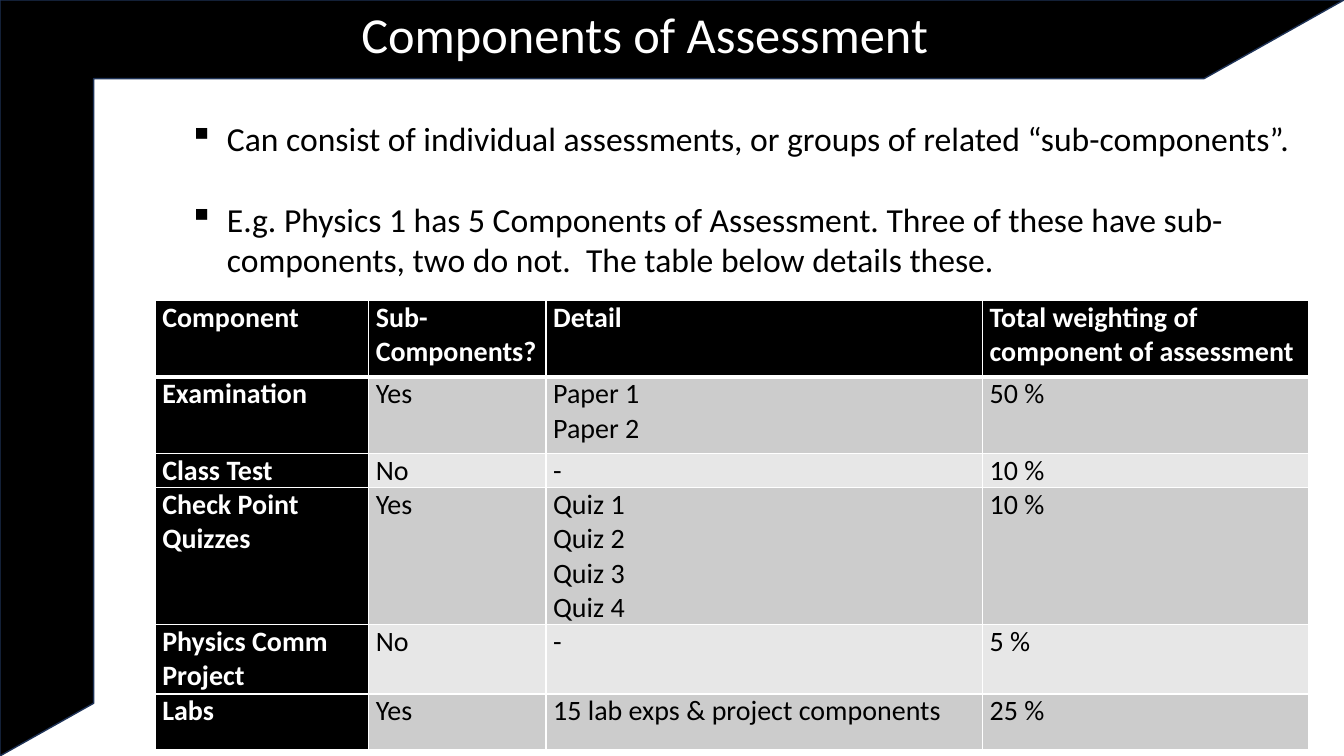
from lxml.etree import SubElement
from pptx import Presentation
from pptx.dml.color import RGBColor
from pptx.enum.shapes import MSO_SHAPE
from pptx.enum.text import MSO_ANCHOR, MSO_AUTO_SIZE, PP_ALIGN
from pptx.oxml import parse_xml
from pptx.oxml.ns import nsdecls, qn
from pptx.util import Cm, Pt

BLACK, WHITE, NAVY = "000000", "FFFFFF", "1E3256"
DARK_BAND, LIGHT_BAND = "CCCCCC", "E7E7E7"
WIDTH, HEIGHT = 33.87, 19.05

BULLETS = [
    "Can consist of individual assessments, or groups of related “sub-components”.",
    "E.g. Physics 1 has 5 Components of Assessment. Three of these have "
    "sub-components, two do not.  The table below details these.",
]
COMPONENTS = [
    ["Component", "Sub-Components?", "Detail",
     "Total weighting of component of assessment"],
    ["Examination", "Yes", "Paper 1\nPaper 2", "50 %"],
    ["Class Test", "No", "-", "10 %"],
    ["Check Point Quizzes", "Yes", "Quiz 1\nQuiz 2\nQuiz 3\nQuiz 4", "10 %"],
    ["Physics Comm Project", "No", "-", "5 %"],
    ["Labs", "Yes", "15 lab exps & project components", "25 %"],
]
COL_WIDTHS = [5.38, 4.47, 11, 8.21]
ROW_HEIGHTS = [1.93, 1.93, 0.86, 3.45, 1.75, 1.4]


def rgb(color):
    return RGBColor.from_string(color)


class AssessmentSlide:
    font = "Calibri"

    def __init__(self, prs):
        self.s = prs.slides.add_slide(prs.slide_layouts[6])

    def add_run(self, p, text, size, color=BLACK, bold=False):
        r = p.add_run()
        r.text = text
        r.font.name, r.font.size, r.font.bold = self.font, Pt(size), bold
        r.font.color.rgb = rgb(color)

    def frame(self):
        sp = self.s.shapes.add_shape(MSO_SHAPE.HALF_FRAME, 0, 0, Cm(WIDTH), Cm(HEIGHT))
        sp.adjustments[0], sp.adjustments[1] = 0.104, 0.124
        sp.shadow.inherit = False
        sp.fill.solid()
        sp.fill.fore_color.rgb = rgb(BLACK)
        sp.line.color.rgb = rgb(NAVY)
        sp.line.width = Pt(1)

    def text_box(self, x, y, w, h):
        tf = self.s.shapes.add_textbox(Cm(x), Cm(y), Cm(w), Cm(h)).text_frame
        tf.word_wrap = True
        return tf

    def title(self, text, x, y, w, h):
        tf = self.text_box(x, y, w, h)
        tf.vertical_anchor = MSO_ANCHOR.BOTTOM
        p = tf.paragraphs[0]
        p.alignment, p.line_spacing = PP_ALIGN.CENTER, 0.7
        self.add_run(p, text, 36, WHITE)

    def bullets(self, items, x, y, w, h):
        tf = self.text_box(x, y, w, h)
        tf.auto_size = MSO_AUTO_SIZE.SHAPE_TO_FIT_TEXT
        for i, item in enumerate(items):
            p = tf.add_paragraph() if i else tf.paragraphs[0]
            p.level = 1
            p.space_before = Pt(29 if i else 0)
            pPr = p._p.get_or_add_pPr()
            pPr.set("marL", str(Cm(2.22)))
            pPr.set("indent", str(Cm(-0.95)))
            SubElement(pPr, qn("a:buChar"), char="▪")
            self.add_run(p, item, 24)

    def borders(self, cell, top, bottom):
        """Draw white cell borders, 1 pt at the sides."""
        tcPr = cell._tc.get_or_add_tcPr()
        for i, (side, width) in enumerate(zip("LRTB", (1, 1, top, bottom))):
            tcPr.insert(i, parse_xml(
                f'<a:ln{side} {nsdecls("a")} w="{Pt(width)}"><a:solidFill>'
                f'<a:srgbClr val="{WHITE}"/></a:solidFill></a:ln{side}>'))

    def cell(self, cell, text, fill, heading):
        cell.margin_left = cell.margin_right = Cm(0.18)
        cell.margin_top = cell.margin_bottom = 0
        cell.fill.solid()
        cell.fill.fore_color.rgb = rgb(fill)
        tf = cell.text_frame
        for i, line in enumerate(text.split("\n")):
            p = tf.add_paragraph() if i else tf.paragraphs[0]
            self.add_run(p, line, 20, WHITE if heading else BLACK, heading)

    def table(self, rows, x, y, widths, heights):
        table = self.s.shapes.add_table(
            len(rows), len(widths), Cm(x), Cm(y),
            Cm(sum(widths)), Cm(sum(heights))).table
        for column, width in zip(table.columns, widths):
            column.width = Cm(width)
        for i, (row, height) in enumerate(zip(rows, heights)):
            table.rows[i].height = Cm(height)
            band = DARK_BAND if i % 2 else LIGHT_BAND
            for j, text in enumerate(row):
                heading = i == 0 or j == 0
                cell = table.cell(i, j)
                self.cell(cell, text, BLACK if heading else band, heading)
                self.borders(cell, 3 if i == 1 else 1, 3 if i == 0 else 1)


def main():
    prs = Presentation()
    prs.slide_width, prs.slide_height = Cm(WIDTH), Cm(HEIGHT)
    slide = AssessmentSlide(prs)
    slide.frame()
    slide.bullets(BULLETS, 3.25, 2.84, 30.35, 4.37)
    slide.table(COMPONENTS, 3.91, 7.57, COL_WIDTHS, ROW_HEIGHTS)
    slide.title("Components of Assessment", 6.05, 0.28, 20.4, 1.42)
    prs.save("out.pptx")


if __name__ == "__main__":
    main()
